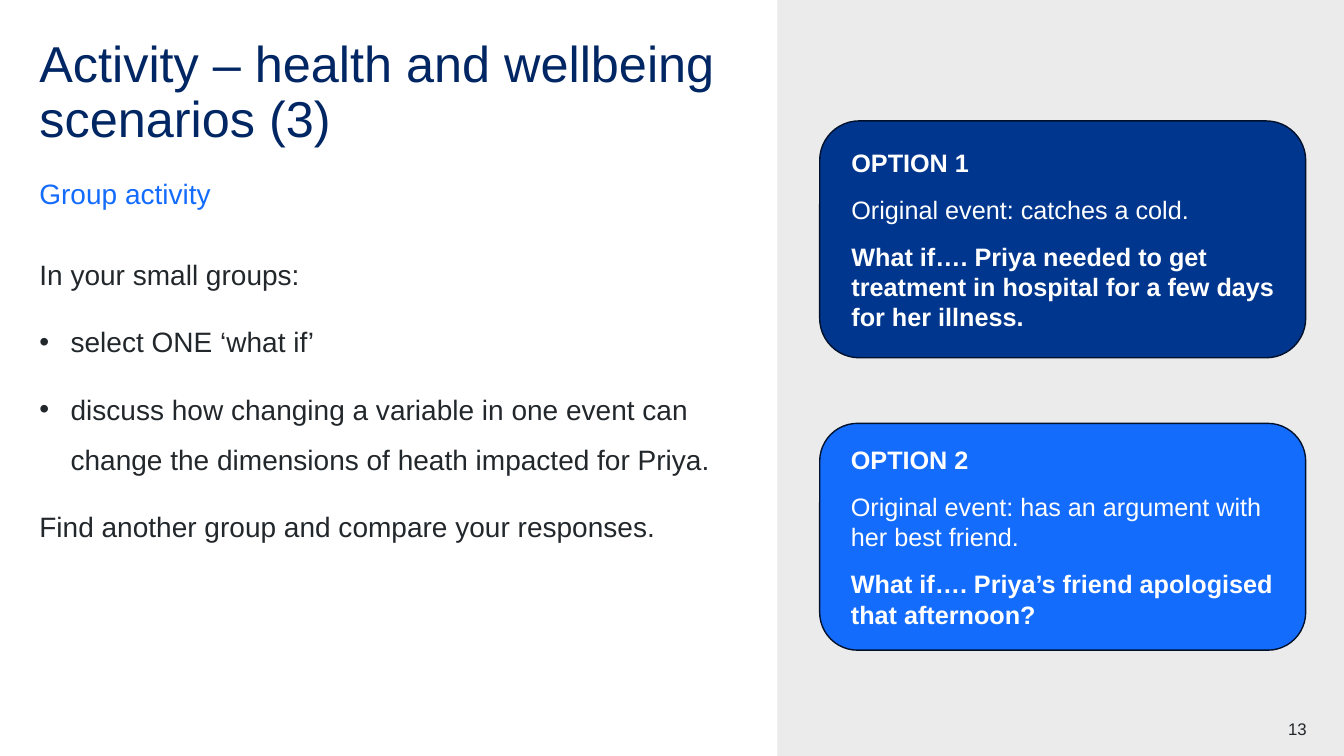
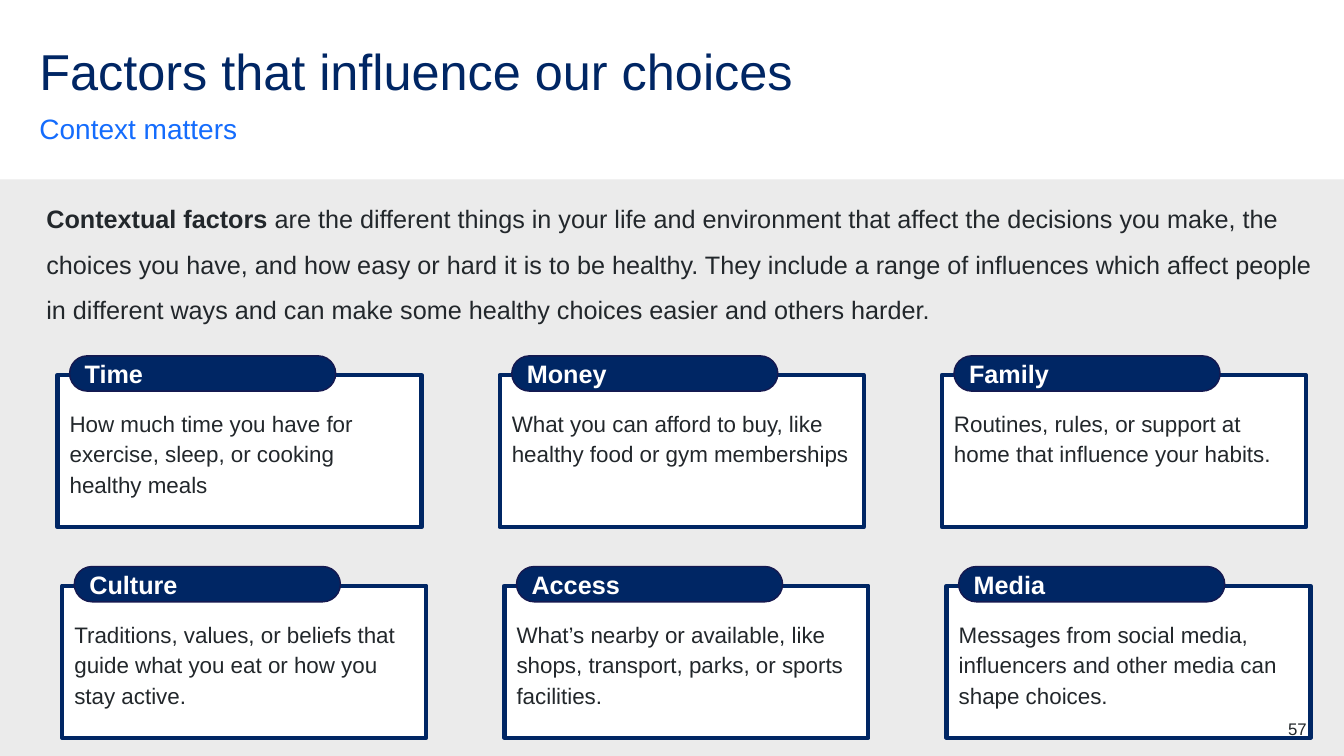
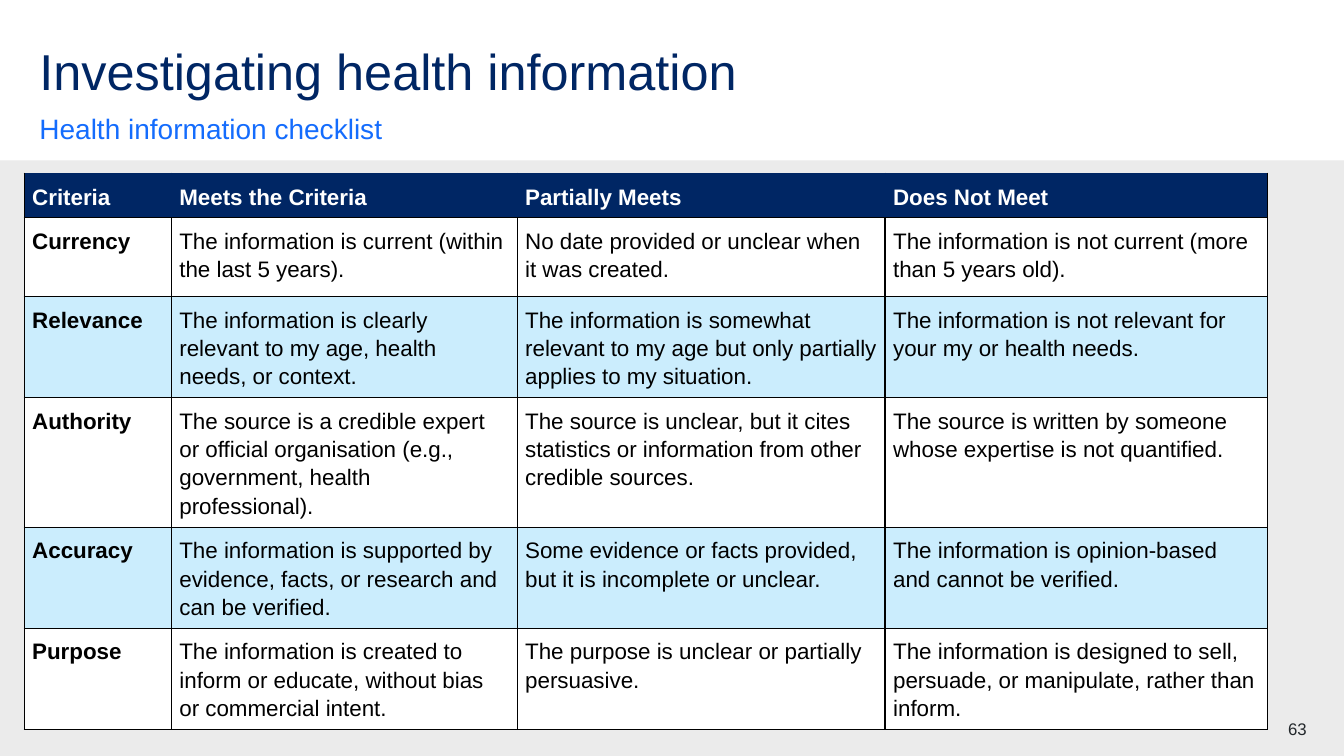
from lxml import etree
from pptx import Presentation
from pptx.dml.color import RGBColor
from pptx.enum.shapes import MSO_SHAPE
from pptx.enum.text import MSO_ANCHOR, MSO_AUTO_SIZE, PP_ALIGN
from pptx.oxml.ns import qn
from pptx.util import Inches, Pt

RECT, ROUND = MSO_SHAPE.RECTANGLE, MSO_SHAPE.ROUNDED_RECTANGLE
TOP, MID, LOW = MSO_ANCHOR.TOP, MSO_ANCHOR.MIDDLE, MSO_ANCHOR.BOTTOM
LEFT, RIGHT = PP_ALIGN.LEFT, PP_ALIGN.RIGHT
FIXED = MSO_AUTO_SIZE.NONE

NAVY, ROYAL, BLUE, PALE = "002664", "00368D", "146CFD", "CBEDFD"
INK, BLACK, WHITE, GREY = "22272B", "000000", "FFFFFF", "EBEBEB"
FACE = "Arial"
tint = RGBColor.from_string

deck = Presentation()
deck.slide_width, deck.slide_height = Inches(13.33), Inches(7.5)


def place(x, y, w, h):
    wide, high = deck.slide_width / 100, deck.slide_height / 100
    return [int(n) for n in (x * wide, y * high, w * wide, h * high)]


def write(frame, lines, size, color, space=1.0, gap=(0, 0), anchor=TOP,
          inset=None, align=LEFT, dots=()):
    frame.word_wrap = True
    frame.auto_size = FIXED
    frame.vertical_anchor = anchor
    if inset:
        (frame.margin_left, frame.margin_top,
         frame.margin_right, frame.margin_bottom) = [Inches(n) for n in inset]
    for i, runs in enumerate(lines):
        para = frame.paragraphs[0] if i == 0 else frame.add_paragraph()
        para.alignment = align
        para.line_spacing = space
        para.space_before = Pt(gap[0] if i else 0)
        para.space_after = Pt(gap[1])
        props = para._p.get_or_add_pPr()
        hang = Inches(0.31) if i in dots else 0
        props.set("marL", str(hang))
        props.set("indent", str(-hang))
        if i in dots:
            etree.SubElement(props, qn("a:buChar")).set("char", "•")
        else:
            etree.SubElement(props, qn("a:buNone"))
        for text, bold in runs:
            run = para.add_run()
            run.text = text
            run.font.name = FACE
            run.font.size = Pt(size)
            run.font.bold = bold
            run.font.color.rgb = tint(color)


FLUSH = (0, 0, 0, 0)
EDGE = 2.93
ONE, TWO = 1, 3
HALF = (EDGE, 5.2, 52.06, 8), (EDGE, 23.33, 52.06, 4.53)
FULL = (EDGE, 6.27, 94.22, 8), (EDGE, 14.93, 44.34, 4.27)
pages = [
    (TWO, "Activity – health and wellbeing scenarios (3)", "Group activity",
     HALF, (57.84, 0, 42.16, 100), "13"),
    (TWO, "Factors that influence our choices", "Context matters",
     FULL, (0, 23.73, 100, 76.27), "57"),
    (ONE, "Investigating health information", "Health information checklist",
     FULL, (0, 21.2, 100, 78.8), "63"),
]
slides, paint = [], []
for kind, head, sub, spots, band, num in pages:
    slide = deck.slides.add_slide(deck.slide_layouts[kind])
    slides.append(slide)
    panel = slide.shapes.add_shape(RECT, *place(*band))
    slide.shapes.element.insert(2, panel.element)
    paint.append((panel, GREY, None, 0))
    title, lead = slide.shapes.title, slide.placeholders[1]
    for item, spot in zip((title, lead), spots):
        item.left, item.top, item.width, item.height = place(*spot)
    write(title.text_frame, [[(head, False)]], 36, NAVY, 0.9, inset=FLUSH)
    write(lead.text_frame, [[(sub, False)]], 20, BLUE, 1.5, (0, 12), LOW, FLUSH)

task, facts, check = slides

body = task.placeholders[2]
body.left, body.top, body.width, body.height = place(EDGE, 31.87, 52.06, 63.07)
steps = [
    "In your small groups:",
    "select ONE ‘what if’",
    "discuss how changing a variable in one event can change the dimensions of heath impacted for Priya.",
    "Find another group and compare your responses.",
]
write(body.text_frame, [[(step, False)] for step in steps], 20, INK, 1.5,
      (0, 12), inset=FLUSH, dots=(1, 2))

picks = [
    (16, 31.33, ROYAL, "OPTION 1", "Original event: catches a cold.",
     "What if…. Priya needed to get treatment in hospital for a few days for her illness."),
    (56, 30, BLUE, "OPTION 2", "Original event: has an argument with her best friend.",
     "What if…. Priya’s friend apologised that afternoon?"),
]
for y, h, fill, name, event, twist in picks:
    card = task.shapes.add_shape(ROUND, *place(60.99, y, 36.16, h))
    paint.append((card, fill, "00112C", 1))
    write(card.text_frame, [[(name, True)], [(event, False)], [(twist, True)]],
          18, WHITE, gap=(6, 6), anchor=MID, inset=(0.2, 0.05, 0.1, 0.05))

body = facts.placeholders[2]
body.left, body.top, body.width, body.height = place(3.45, 24.93, 94.82, 17.6)
write(body.text_frame, [[
    ("Contextual factors", True),
    (" are the different things in your life and environment that affect the decisions you make, "
     "the choices you have, and how easy or hard it is to be healthy. They include a range of "
     "influences which affect people in different ways and can make some healthy choices easier "
     "and others harder.", False),
]], 18, INK, 1.5, (0, 12), inset=FLUSH)

themes = [
    ("Time", "How much time you have for exercise, sleep, or cooking healthy meals"),
    ("Money", "What you can afford to buy, like healthy food or gym memberships"),
    ("Family", "Routines, rules, or support at home that influence your habits."),
    ("Culture", "Traditions, values, or beliefs that guide what you eat or how you stay active."),
    ("Access", "What’s nearby or available, like shops, transport, parks, or sports facilities."),
    ("Media", "Messages from social media, influencers and other media can shape choices."),
]
for i, (name, note) in enumerate(themes):
    row, col = divmod(i, 3)
    x, y = 4.28 + 32.9 * col + 0.35 * row, 49.6 + 27.87 * row
    group = facts.shapes.add_group_shape().shapes
    card = group.add_shape(RECT, *place(x, y, 27.08, 20.13))
    write(card.text_frame, [[(note, False)]], 16, INK, 1.14, (0, 12),
          inset=(0.12, 0.31, 0.12, 0))
    pill = group.add_shape(ROUND, *place(x + 0.9, y - 2.53, 19.8, 4.67))
    pill.adjustments[0] = 0.5
    write(pill.text_frame, [[(name, True)]], 18, WHITE, anchor=MID)
    paint += [(card, WHITE, NAVY, 3), (pill, NAVY, "151950", 1)]

for shape, fill, edge, wide in paint:
    shape.shadow.inherit = False
    shape.fill.solid()
    shape.fill.fore_color.rgb = tint(fill)
    if edge:
        shape.line.color.rgb = tint(edge)
        shape.line.width = Pt(wide)
    else:
        shape.line.fill.background()

grid = [
    ("Criteria", "Meets the Criteria", "Partially Meets", "Does Not Meet"),
    ("Currency", "The information is current (within the last 5 years).",
     "No date provided or unclear when it was created.",
     "The information is not current (more than 5 years old)."),
    ("Relevance", "The information is clearly relevant to my age, health needs, or context.",
     "The information is somewhat relevant to my age but only partially applies to my situation.",
     "The information is not relevant for your my or health needs."),
    ("Authority",
     "The source is a credible expert or official organisation (e.g., government, health professional).",
     "The source is unclear, but it cites statistics or information from other credible sources.",
     "The source is written by someone whose expertise is not quantified."),
    ("Accuracy", "The information is supported by evidence, facts, or research and can be verified.",
     "Some evidence or facts provided, but it is incomplete or unclear.",
     "The information is opinion-based and cannot be verified."),
    ("Purpose", "The information is created to inform or educate, without bias or commercial intent.",
     "The purpose is unclear or partially persuasive.",
     "The information is designed to sell, persuade, or manipulate, rather than inform."),
]
cols = [10.95, 25.73, 27.38, 28.43]
rows = [4.53, 10.4, 12.8, 17.07, 12.8, 12.8]
spot = place(1.8, 22.93, sum(cols), sum(rows))
table = check.shapes.add_table(len(rows), len(cols), *spot).table
table.first_row = table.horz_banding = False
for col, share in zip(table.columns, cols):
    col.width = int(deck.slide_width * share / 100)
for row, share in zip(table.rows, rows):
    row.height = int(deck.slide_height * share / 100)
for r, texts in enumerate(grid):
    for c, text in enumerate(texts):
        cell = table.cell(r, c)
        cell.margin_left = cell.margin_right = Inches(0.08)
        cell.margin_top = cell.margin_bottom = Inches(0.08)
        write(cell.text_frame, [[(text, r == 0 or c == 0)]], 16,
              BLACK if r else WHITE, 1.14, (0, 6))
        sides = {
            "L": BLACK if r or c == 0 else NAVY,
            "R": BLACK if r or c == len(cols) - 1 else NAVY,
            "T": BLACK if r else NAVY,
            "B": BLACK,
        }
        props = cell._tc.get_or_add_tcPr()
        for side, color in sides.items():
            line = etree.SubElement(props, qn("a:ln" + side), w=str(Pt(1)))
            solid = etree.SubElement(line, qn("a:solidFill"))
            etree.SubElement(solid, qn("a:srgbClr"), val=color)
        cell.fill.solid()
        cell.fill.fore_color.rgb = tint(NAVY if r == 0 else WHITE if r % 2 else PALE)

for slide, page in zip(slides, pages):
    mark = slide.shapes.add_textbox(*place(91.3, 95.07, 5.93, 2.67))
    write(mark.text_frame, [[(page[-1], False)]], 12, INK, inset=FLUSH, align=RIGHT)

deck.save("out.pptx")
